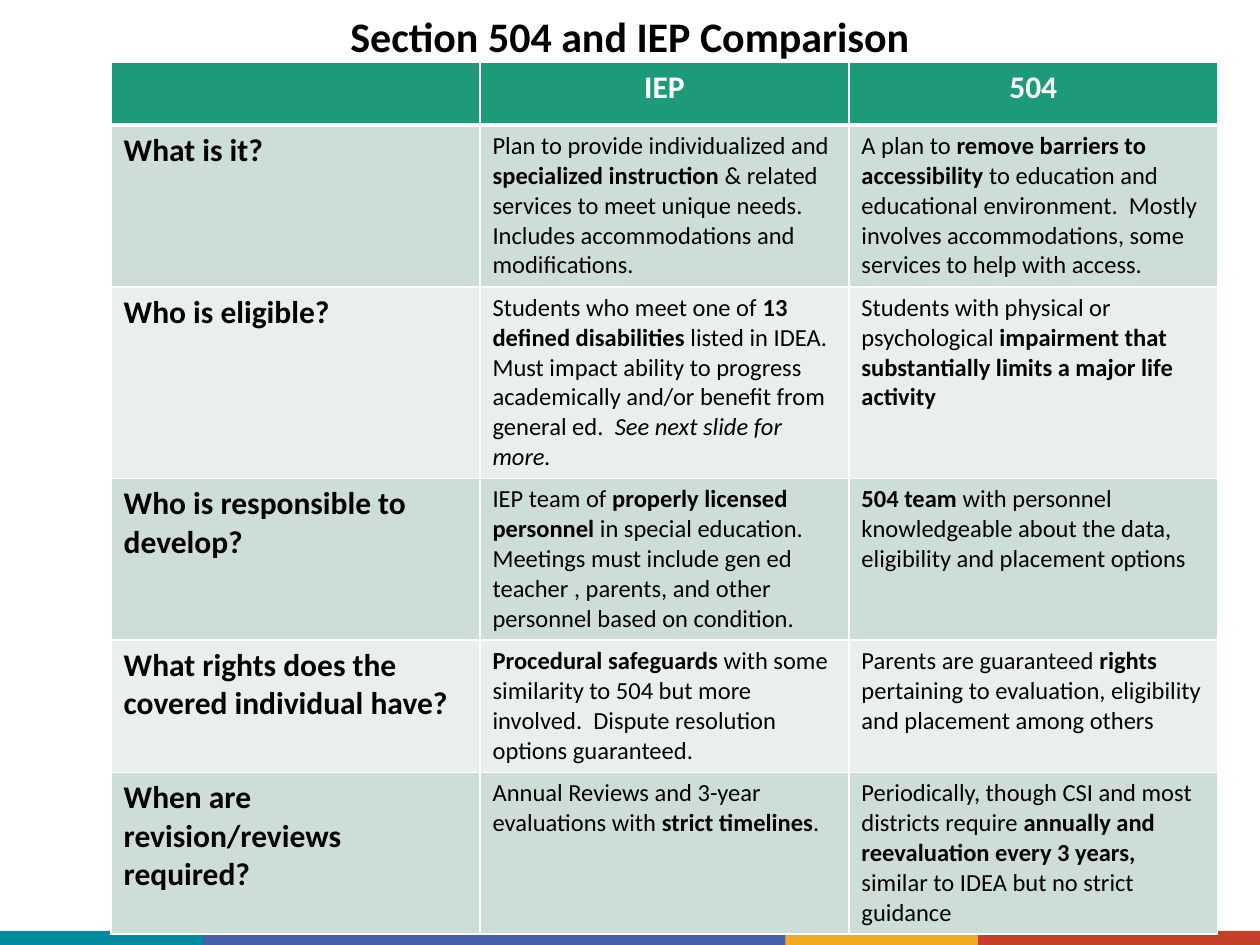
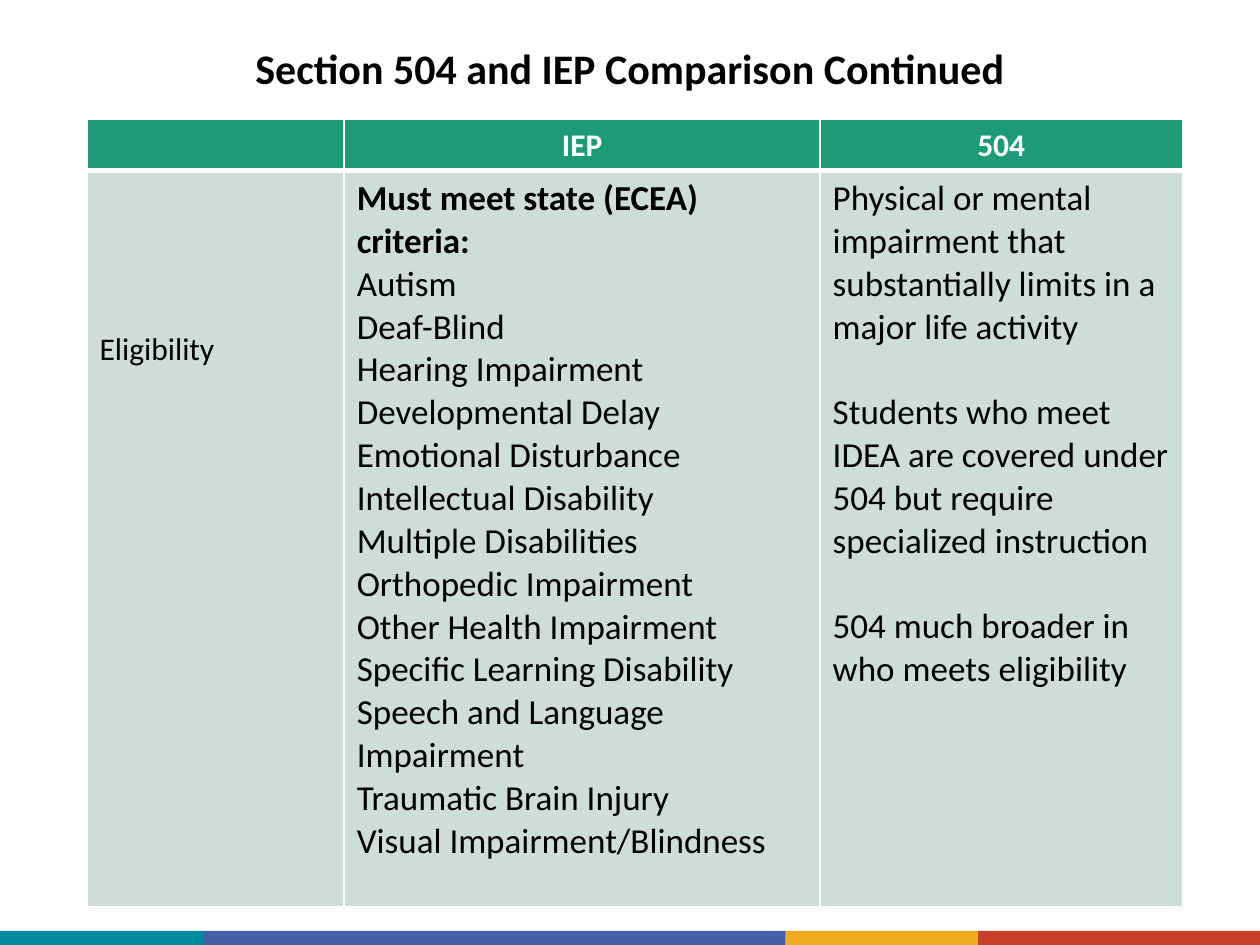
from dataclasses import dataclass

from lxml import etree
from pptx import Presentation
from pptx.dml.color import RGBColor
from pptx.enum import shapes, text
from pptx.oxml import ns
from pptx.util import Pt


@dataclass(frozen=True)
class Theme:
    font: str = "Calibri"
    ink: str = "000000"
    white: str = "FFFFFF"
    header: str = "1D9A78"
    rows: tuple = ("CDDED6", "E8EFEC")
    title_size: int = 24
    header_size: int = 18
    rule: int = 1
    header_rule: int = 3


THEME = Theme()
WIDTH, HEIGHT = 720, 540
TITLE_LEFT, TITLE_WIDTH, TITLE_HEIGHT = 49.7, 620.6, 54.7
BAND_TOP, BAND_HEIGHT = 532, 8
BANDS = [("008CA0", 116), ("455FA9", 333), ("EFAA1F", 110), ("C63F28", 161)]
LINE = 1.22  # line height of the font, as a share of its size
HEADINGS = ["", "IEP", "504"]

# In cell text, *stars* mark bold and _underscores_ mark italic;
# each line is a paragraph.
COMPARISON = [
    ("*What is it?*",
     "Plan to provide individualized and *specialized instruction *& related services to meet "
     "unique needs.  Includes accommodations and modifications.",
     "A plan to *remove barriers to accessibility* to education and educational environment.  "
     "Mostly involves accommodations, some services to help with access."),
    ("*Who is eligible?*",
     "Students who meet one of *13 defined disabilities* listed in IDEA.  Must impact ability to "
     "progress academically and/or benefit from general ed.  _See next slide for more._",
     "Students with physical or psychological *impairment that substantially limits a major life "
     "activity*"),
    ("*Who is responsible to develop?*",
     "IEP team of* properly licensed personnel *in special education.  Meetings must include gen "
     "ed teacher , parents, and other personnel based on condition.",
     "*504 team *with personnel knowledgeable about the data, eligibility and placement options"),
    ("*What rights does the covered individual have?*",
     "*Procedural safeguards *with some similarity to 504 but more involved.  Dispute resolution "
     "options guaranteed.",
     "Parents are guaranteed *rights* pertaining to evaluation, eligibility and placement among "
     "others"),
    ("*When are revision/reviews required?*",
     "Annual Reviews and 3-year evaluations with *strict timelines*.",
     "Periodically, though CSI and most districts require *annually and reevaluation every 3 "
     "years, *similar to IDEA but no strict guidance"),
]

DISABILITIES = [
    "Autism", "Deaf-Blind", "Hearing Impairment", "Developmental Delay",
    "Emotional Disturbance", "Intellectual Disability", "Multiple Disabilities",
    "Orthopedic Impairment", "Other Health Impairment", "Specific Learning Disability",
    "Speech and Language Impairment", "Traumatic Brain Injury", "Visual Impairment/Blindness",
]
ELIGIBILITY = [
    ("Eligibility",
     "\n".join(["*Must meet state (ECEA) criteria:*", *DISABILITIES]),
     "Physical or mental impairment that substantially limits in a major life activity\n"
     "Students who meet IDEA are covered under 504 but require specialized instruction\n"
     "504 much broader in who meets eligibility"),
]

SLIDES = [
    dict(title="Section 504 and IEP Comparison", title_top=-5, body=COMPARISON,
         left=63.5, top=35.5, widths=[210.8] * 3, heights=[36, 92, 109, 92.5, 75.5, 92.5],
         sizes=[18, 14, 14]),
    dict(title="Section 504 and IEP Comparison Continued", title_top=13, body=ELIGIBILITY,
         left=49.7, top=68.4, widths=[147, 272, 207], heights=[29.2, 420.6],
         sizes=[18, 20, 20]),
]


def rgb(color):
    return RGBColor.from_string(color)


def set_font(font, **values):
    font.name = THEME.font
    font.color.rgb = rgb(values.pop("color", THEME.ink))
    for name, value in values.items():
        setattr(font, name, value)


def add_runs(p, marked, **values):
    for i, part in enumerate(marked.split("*")):
        for j, piece in enumerate(part.split("_")):
            if piece:
                r = p.add_run()
                r.text = piece
                set_font(r.font, **{"bold": i % 2 == 1, "italic": j % 2 == 1, **values})


def set_borders(cell, top, bottom):
    tc_pr = cell._tc.get_or_add_tcPr()
    sides = {"L": THEME.rule, "R": THEME.rule, "T": top, "B": bottom}
    for i, (side, width) in enumerate(sides.items()):
        ln = etree.Element(ns.qn(f"a:ln{side}"), w=str(Pt(width)))
        fill = etree.SubElement(ln, ns.qn("a:solidFill"))
        etree.SubElement(fill, ns.qn("a:srgbClr"), val=THEME.white)
        tc_pr.insert(i, ln)


def fill_cell(cell, row, marked, size):
    header = row == 0
    cell.fill.solid()
    cell.fill.fore_color.rgb = rgb(THEME.header if header else THEME.rows[(row - 1) % 2])
    set_borders(cell, THEME.header_rule if row == 1 else THEME.rule,
                THEME.header_rule if header else THEME.rule)
    tf = cell.text_frame
    for i, line in enumerate(marked.split("\n")):
        p = tf.add_paragraph() if i else tf.paragraphs[0]
        if header:
            p.alignment = text.PP_ALIGN.CENTER
            add_runs(p, line, size=Pt(THEME.header_size), color=THEME.white, bold=True)
        else:
            add_runs(p, line, size=Pt(size))


def add_table(s, body, left, top, widths, heights, sizes):
    frame = s.shapes.add_table(len(heights), len(widths), Pt(left), Pt(top),
                               Pt(sum(widths)), Pt(sum(heights)))
    table = frame.table
    for column, width in zip(table.columns, widths):
        column.width = Pt(width)
    for row, height in zip(table.rows, heights):
        row.height = Pt(height)
    for i, line in enumerate([HEADINGS, *body]):
        for j, marked in enumerate(line):
            fill_cell(table.cell(i, j), i, marked, sizes[j])
    return table


def add_title(s, title, top):
    sp = s.shapes.title
    sp.left, sp.top = Pt(TITLE_LEFT), Pt(top)
    sp.width, sp.height = Pt(TITLE_WIDTH), Pt(TITLE_HEIGHT)
    tf = sp.text_frame
    tf.vertical_anchor = text.MSO_ANCHOR.MIDDLE
    tf.auto_size = text.MSO_AUTO_SIZE.NONE
    p = tf.paragraphs[0]
    p.alignment, p.line_spacing = text.PP_ALIGN.CENTER, 0.9
    add_runs(p, title, size=Pt(THEME.title_size), bold=True)


def move_bands_to_master(prs, s):
    """Draw the footer bands on a slide, then hand them to the master."""
    left = 0
    for i, (color, width) in enumerate(BANDS):
        sp = s.shapes.add_shape(shapes.MSO_SHAPE.RECTANGLE, Pt(left), Pt(BAND_TOP),
                                Pt(width), Pt(BAND_HEIGHT))
        sp.name = f"Footer band {i + 1}"
        sp.shadow.inherit = False
        sp.fill.solid()
        sp.fill.fore_color.rgb = rgb(color)
        sp.line.fill.background()
        sp.element.nvSpPr.cNvPr.set("id", str(100 + i))
        prs.slide_master.element.cSld.spTree.append(sp.element)
        left += width


def main():
    prs = Presentation()
    prs.slide_width, prs.slide_height = Pt(WIDTH), Pt(HEIGHT)
    tables = []
    for content in SLIDES:
        s = prs.slides.add_slide(prs.slide_layouts.get_by_name("Title Only"))
        values = dict(content)
        add_title(s, values.pop("title"), values.pop("title_top"))
        tables.append(add_table(s, **values))
    move_bands_to_master(prs, prs.slides[0])

    label, _, access = [tables[1].cell(1, j) for j in range(3)]
    label.margin_top = Pt(3.6 + 4 * 18 * LINE)
    for p in access.text_frame.paragraphs[1:]:
        p.space_before = Pt(20 * LINE)
    prs.save("out.pptx")


if __name__ == "__main__":
    main()
